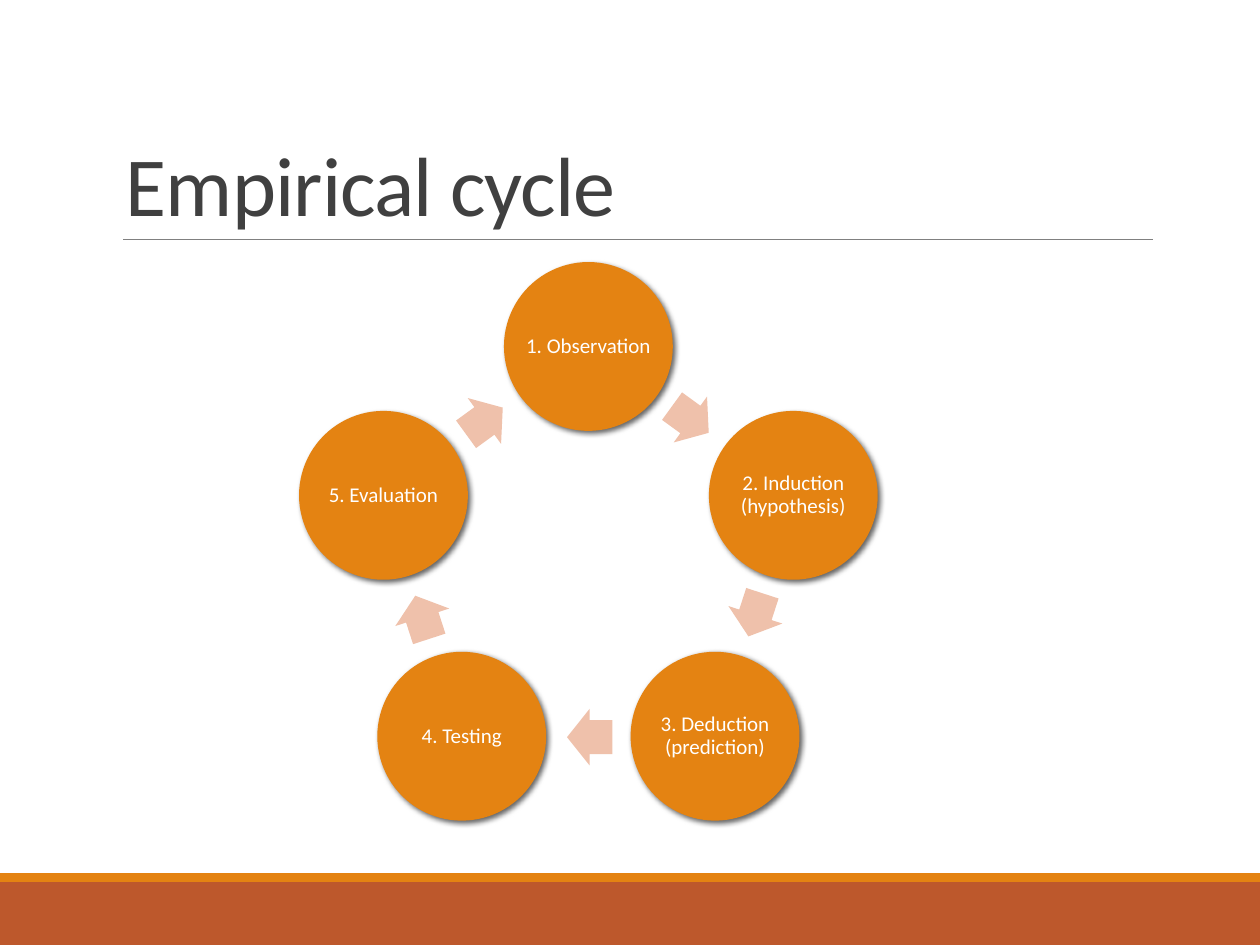
from math import cos, radians, sin

from lxml.etree import SubElement
from pptx import Presentation
from pptx.dml.color import RGBColor
from pptx.enum.shapes import MSO_CONNECTOR, MSO_SHAPE
from pptx.enum.text import MSO_ANCHOR, PP_ALIGN
from pptx.oxml.ns import qn
from pptx.util import Inches, Pt

WIDTH, HEIGHT = 10, 7.5
STAGES = ["1. Observation", "2. Induction (hypothesis)",
          "3. Deduction (prediction)", "4. Testing", "5. Evaluation"]

# Geometry of the cycle, in inches
CENTER_X, CENTER_Y = 4.67, 4.46
RING_RADIUS, ARROW_RADIUS = 1.71, 1.39
DISC = 1.34
ARROW_LENGTH, ARROW_BREADTH = 0.36, 0.45
ARROW_LAG = 0.01

# Format values
TITLE_FRAME = {"word_wrap": True, "vertical_anchor": MSO_ANCHOR.BOTTOM}
TITLE_PARAGRAPH = {"alignment": PP_ALIGN.LEFT, "line_spacing": 0.85}
TITLE_FONT = {"name": "Calibri", "size": Pt(48)}
STAGE_FRAME = {"word_wrap": True, "vertical_anchor": MSO_ANCHOR.MIDDLE,
               **{f"margin_{side}": Inches(0.02)
                  for side in ("left", "top", "right", "bottom")}}
STAGE_PARAGRAPH = {"alignment": PP_ALIGN.CENTER, "line_spacing": 0.9}
STAGE_FONT = {"name": "Calibri", "size": Pt(12)}


def apply_format(target, values):
    for name, value in values.items():
        setattr(target, name, value)


def paint(color_format, hex_color):
    color_format.rgb = RGBColor.from_string(hex_color)


def around(x, y, width, height):
    """Box centred on a point."""
    return x - width / 2, y - height / 2, width, height


def ring_point(angle, radius):
    """Point on the cycle, clockwise from the top."""
    turn = radians(angle)
    return CENTER_X + radius * sin(turn), CENTER_Y - radius * cos(turn)


def add_solid(slide, kind, box, hex_color):
    solid = slide.shapes.add_shape(kind, *map(Inches, box))
    solid.shadow.inherit = False
    solid.fill.solid()
    paint(solid.fill.fore_color, hex_color)
    solid.line.fill.background()
    return solid


def add_label(slide, box, words, hex_color, frame_format, paragraph_format, font_format):
    frame = slide.shapes.add_textbox(*map(Inches, box)).text_frame
    apply_format(frame, frame_format)
    paragraph = frame.paragraphs[0]
    apply_format(paragraph, paragraph_format)
    run = paragraph.add_run()
    run.text = words
    apply_format(run.font, font_format)
    paint(run.font.color, hex_color)
    return run


def add_rule(slide, left, right, y, hex_color):
    rule = slide.shapes.add_connector(
        MSO_CONNECTOR.STRAIGHT, *map(Inches, (left, y, right, y)))
    rule.line.width = Pt(0.5)
    paint(rule.line.color, hex_color)
    SubElement(rule._element.spPr, qn("a:effectLst"))


def cast_shadow(disc):
    effects = disc._element.spPr.find(qn("a:effectLst"))
    shadow = SubElement(effects, qn("a:outerShdw"), blurRad=str(Pt(3)),
                        dist=str(Pt(2)), dir=str(45 * 60000), rotWithShape="0")
    black = SubElement(shadow, qn("a:srgbClr"), val="000000")
    SubElement(black, qn("a:alpha"), val="60000")


def add_stage(slide, angle, words):
    box = around(*ring_point(angle, RING_RADIUS), DISC, DISC)
    cast_shadow(add_solid(slide, MSO_SHAPE.OVAL, box, "E48312"))
    add_label(slide, box, words, "FFFFFF", STAGE_FRAME, STAGE_PARAGRAPH, STAGE_FONT)


def add_cycle_arrow(slide, angle):
    x, y = ring_point(angle, ARROW_RADIUS)
    x -= ARROW_LAG * cos(radians(angle))
    y -= ARROW_LAG * sin(radians(angle))
    arrow = add_solid(slide, MSO_SHAPE.RIGHT_ARROW,
                      around(x, y, ARROW_LENGTH, ARROW_BREADTH), "EFC1AB")
    arrow.adjustments[0], arrow.adjustments[1] = 0.6, 0.5
    arrow.rotation = angle


def main():
    deck = Presentation()
    deck.slide_width, deck.slide_height = Inches(WIDTH), Inches(HEIGHT)
    slide = deck.slides.add_slide(deck.slide_layouts[6])

    # Footer bands
    footer_top, stripe = HEIGHT * 14 / 15, 0.07
    add_solid(slide, MSO_SHAPE.RECTANGLE,
              (0, footer_top, WIDTH, HEIGHT - footer_top), "BD582C")
    add_solid(slide, MSO_SHAPE.RECTANGLE,
              (0, footer_top - stripe, WIDTH, stripe), "E48312")

    # Title and the rule below it
    add_rule(slide, 0.98, 9.15, 1.9, "808080")
    title = add_label(slide, (0.9, 0.31, 8.25, 1.59), "Empirical cycle", "404040",
                      TITLE_FRAME, TITLE_PARAGRAPH, TITLE_FONT)
    title.font._element.set("spc", "-50")

    # Stages, each followed by an arrow halfway to the next
    step = 360 / len(STAGES)
    for index, words in enumerate(STAGES):
        add_stage(slide, index * step, words)
        add_cycle_arrow(slide, (index + 0.5) * step)

    deck.save("out.pptx")


if __name__ == "__main__":
    main()
